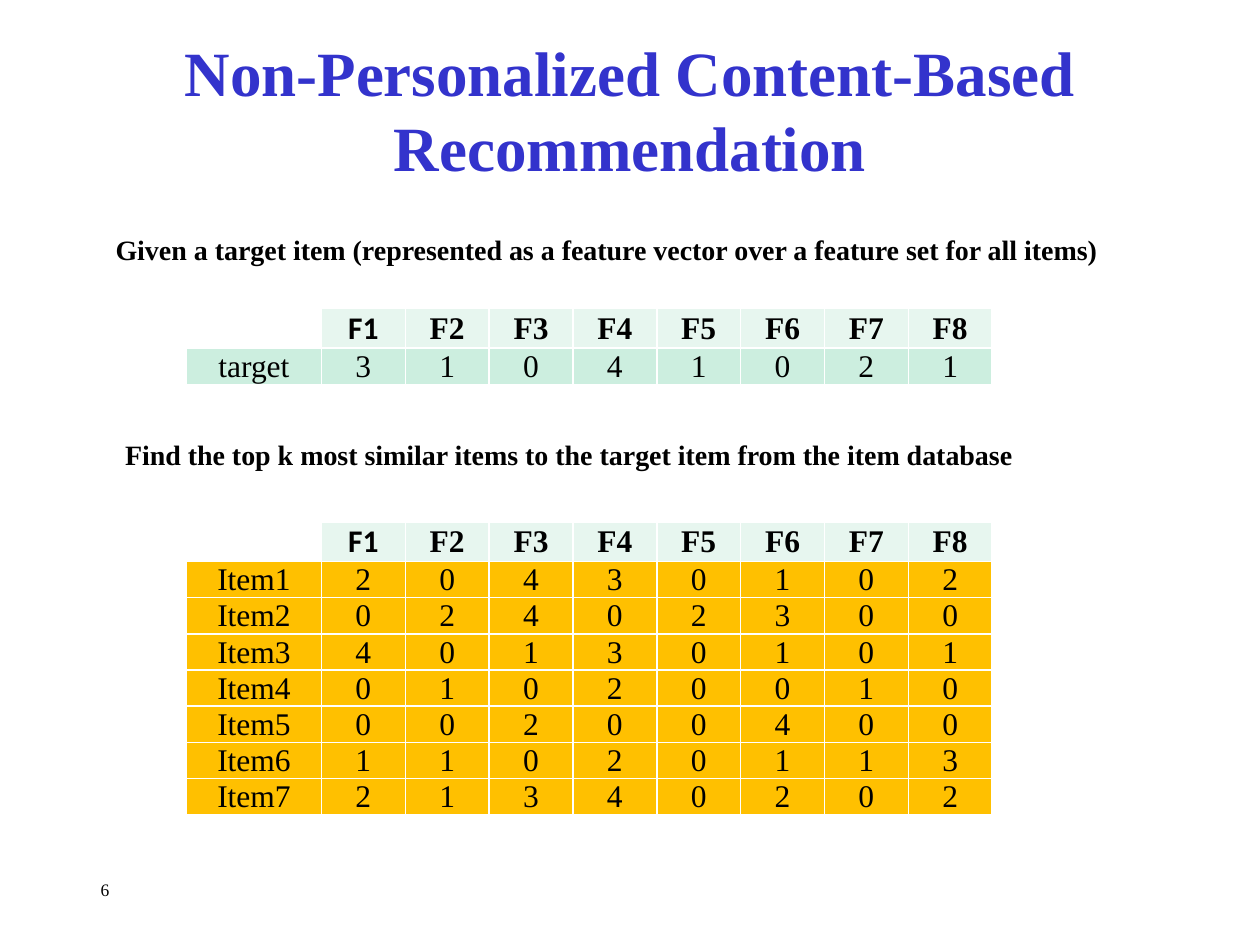
from lxml.etree import SubElement
from pptx import Presentation
from pptx.dml.color import RGBColor
from pptx.enum.text import MSO_ANCHOR, MSO_AUTO_SIZE, PP_ALIGN
from pptx.oxml.ns import qn
from pptx.util import Cm, Pt

BLUE = RGBColor(0x33, 0x33, 0xCC)
BLACK = RGBColor(0, 0, 0)
WHITE = RGBColor(0xFF, 0xFF, 0xFF)
PALE = RGBColor(0xE7, 0xF6, 0xEF)
MINT = RGBColor(0xCC, 0xEE, 0xDF)
AMBER = RGBColor(0xFF, 0xC0, 0x00)
SERIF = "Times New Roman"

TITLE = "Non-Personalized Content-Based Recommendation"
FEATURES = [f"F{n}" for n in range(1, 9)]
TARGET = [("target", 3, 1, 0, 4, 1, 0, 2, 1)]
ITEMS = [
    ("Item1", 2, 0, 4, 3, 0, 1, 0, 2),
    ("Item2", 0, 2, 4, 0, 2, 3, 0, 0),
    ("Item3", 4, 0, 1, 3, 0, 1, 0, 1),
    ("Item4", 0, 1, 0, 2, 0, 0, 1, 0),
    ("Item5", 0, 0, 2, 0, 0, 4, 0, 0),
    ("Item6", 1, 1, 0, 2, 0, 1, 1, 3),
    ("Item7", 2, 1, 3, 4, 0, 2, 0, 2),
]
# text, left, top, width, height (cm), font format, alignment
TEXTS = [
    ("Given a target item (represented as a feature vector over a feature set "
     "for all items)", 1.78, 4.57, 20.6, 0.94, {"size": Pt(16), "bold": True}, PP_ALIGN.RIGHT),
    ("Find the top k most similar items to the target item from the item database",
     1.98, 8.69, 18.69, 0.94, {"size": Pt(16), "bold": True}, PP_ALIGN.RIGHT),
    ("6", 1.78, 17.6, 9.53, 0.64, {"size": Pt(10)}, PP_ALIGN.LEFT),
]
# rows, top (cm), fill of the data rows
TABLES = [(TARGET, 6.22, MINT), (ITEMS, 10.52, AMBER)]

TABLE_LEFT, NAME_W, VALUE_W = 3.76, 2.72, 1.69
HEAD_H, ROW_H = 0.79, 0.73


def write(tf, text, align, color=BLACK, **fmt):
    p = tf.paragraphs[0]
    p.alignment = align
    r = p.add_run()
    r.text = text
    r.font.color.rgb = color
    for name, value in {"name": SERIF, **fmt}.items():
        setattr(r.font, name, value)


def format_cell(cell, fill):
    """Set margins, thin white borders and fill; borders precede the fill in the XML."""
    for side in ("left", "right", "top"):
        setattr(cell, f"margin_{side}", Cm(0.02))
    cell.margin_bottom = 0
    cell.vertical_anchor = MSO_ANCHOR.MIDDLE
    tcPr = cell._tc.get_or_add_tcPr()
    for edge in ("lnL", "lnR", "lnT", "lnB"):
        ln = SubElement(tcPr, qn(f"a:{edge}"), w=str(Pt(1)))
        solid = SubElement(ln, qn("a:solidFill"))
        SubElement(solid, qn("a:srgbClr"), val=str(WHITE))
    cell.fill.solid()
    cell.fill.fore_color.rgb = fill


def add_feature_table(s, rows, top, fill):
    grid = [["", *FEATURES], *rows]
    width = NAME_W + VALUE_W * len(FEATURES)
    height = HEAD_H + ROW_H * len(rows)
    table = s.shapes.add_table(len(grid), len(grid[0]), Cm(TABLE_LEFT), Cm(top),
                               Cm(width), Cm(height)).table
    for i, col in enumerate(table.columns):
        col.width = Cm(VALUE_W if i else NAME_W)
    for i, row in enumerate(table.rows):
        row.height = Cm(ROW_H if i else HEAD_H)
        for j, value in enumerate(grid[i]):
            cell = table.cell(i, j)
            format_cell(cell, fill if i else PALE if j else WHITE)
            if value != "":
                write(cell.text_frame, str(value), PP_ALIGN.CENTER, size=Pt(18),
                      bold=i == 0, name="Calibri" if value == "F1" else SERIF)


def main():
    prs = Presentation()
    prs.slide_width, prs.slide_height = Cm(25.4), Cm(19.05)
    s = prs.slides.add_slide(prs.slide_layouts[5])

    sp = s.shapes.title
    sp.left, sp.top, sp.width, sp.height = Cm(1.9), Cm(1.14), Cm(21.6), Cm(2.11)
    tf = sp.text_frame
    tf.auto_size = MSO_AUTO_SIZE.NONE
    tf.vertical_anchor = MSO_ANCHOR.MIDDLE
    write(tf, TITLE, PP_ALIGN.CENTER, BLUE, size=Pt(36), bold=True)

    for rows, top, fill in TABLES:
        add_feature_table(s, rows, top, fill)

    for text, left, top, width, height, fmt, align in TEXTS:
        tf = s.shapes.add_textbox(Cm(left), Cm(top), Cm(width), Cm(height)).text_frame
        tf.word_wrap = align == PP_ALIGN.LEFT
        write(tf, text, align, **fmt)

    prs.save("out.pptx")


if __name__ == "__main__":
    main()
